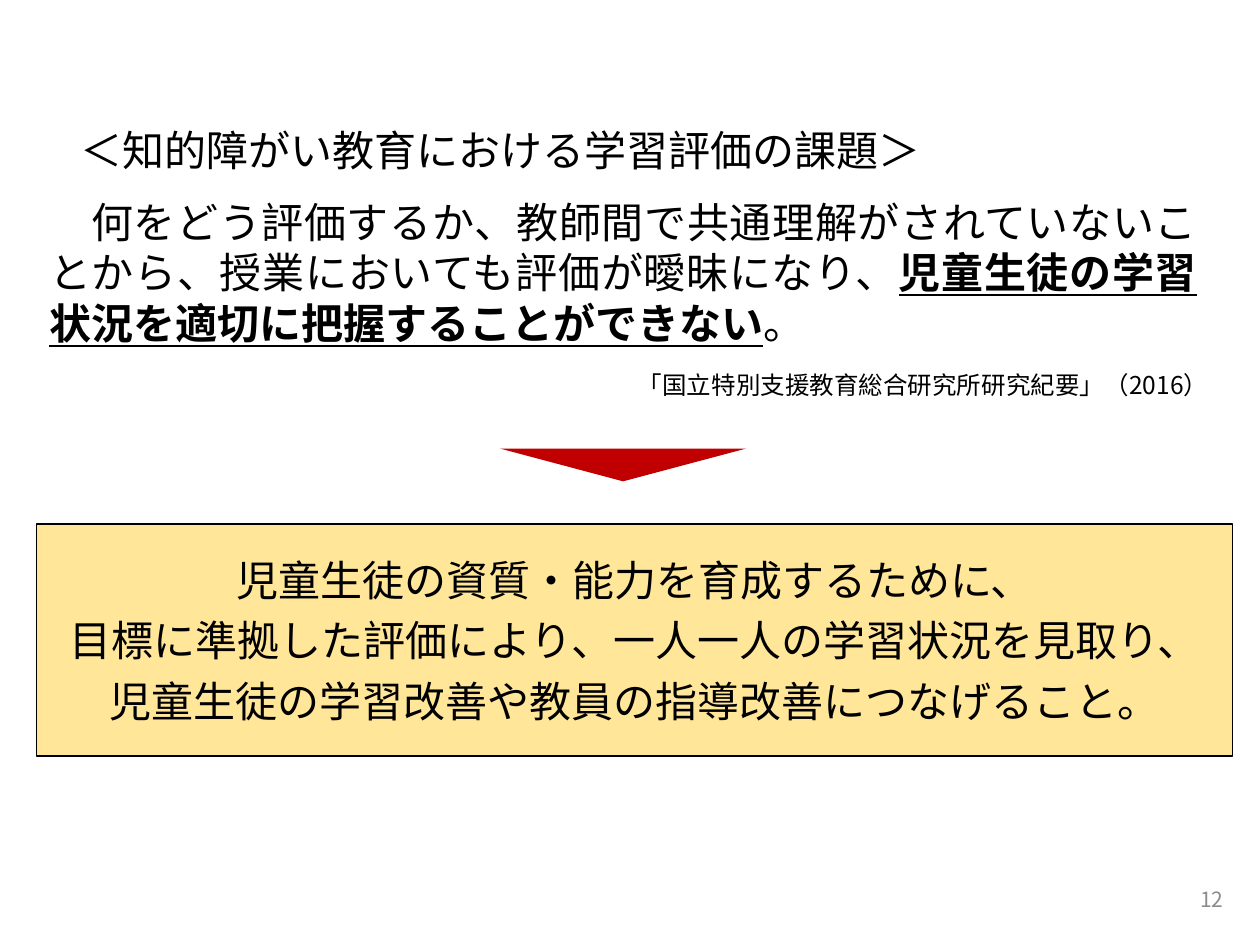
from dataclasses import dataclass

from lxml.etree import SubElement
from pptx import Presentation
from pptx.dml.color import RGBColor
from pptx.enum.shapes import MSO_SHAPE
from pptx.enum.text import MSO_ANCHOR, MSO_AUTO_SIZE, PP_ALIGN
from pptx.oxml.ns import qn
from pptx.util import Inches, Pt


@dataclass(frozen=True)
class Theme:
    font: str = "Noto Sans CJK JP"
    ink: str = "000000"
    muted: str = "8C8C8C"
    panel: str = "FFE699"
    accent: str = "C00000"
    main: int = 24
    source: int = 14
    number: int = 12


theme = Theme()


def place(box, left, top, width, height):
    """Set the position and size of a box in inches."""
    box.left, box.top = Inches(left), Inches(top)
    box.width, box.height = Inches(width), Inches(height)
    return box


def write(box, paragraphs, size=theme.main, color=theme.ink, align=PP_ALIGN.LEFT,
          anchor=MSO_ANCHOR.MIDDLE, before=0):
    """Fill a box; each paragraph is a list of (text, emphasised) spans."""
    frame = box.text_frame
    frame.word_wrap = True
    frame.auto_size = MSO_AUTO_SIZE.NONE
    frame.vertical_anchor = anchor
    for index, spans in enumerate(paragraphs):
        para = frame.add_paragraph() if index else frame.paragraphs[0]
        para.alignment = align
        para.line_spacing = 1.0
        para.space_before = Pt(before)
        for text, emphasised in spans:
            span = para.add_run()
            span.text = text
            span.font.size = Pt(size)
            span.font.bold = span.font.underline = emphasised
            span.font.color.rgb = RGBColor.from_string(color)
            span.font.name = theme.font
            SubElement(span.font._element, qn("a:ea"), typeface=theme.font)


deck = Presentation()
deck.slide_width, deck.slide_height = Inches(10), Inches(7.5)
page = deck.slides.add_slide(deck.slide_layouts[1])
shapes = page.shapes
left_edge, text_width = 0.29, 9.31

# Heading and statement of the problem
heading = place(shapes.title, left_edge, 0.94, text_width, 0.5)
write(heading, [[("＜知的障がい教育における学習評価の課題＞", False)]])
heading.text_frame.margin_left = Inches(0.35)

problem = place(page.placeholders[1], left_edge, 1.5, text_width, 1.32)
write(problem, [[
    ("何をどう評価するか、教師間で共通理解がされていないことから、"
     "授業においても評価が曖昧になり、", False),
    ("児童生徒の学習状況を適切に把握することができない", True),
    ("。", False),
]], align=PP_ALIGN.JUSTIFY)
layout = problem.text_frame.paragraphs[0]._p.get_or_add_pPr()
layout.set("marL", "0")
layout.set("indent", str(Pt(theme.main)))
SubElement(layout, qn("a:buNone"))

# Source and page number
source = place(shapes.add_textbox(0, 0, 0, 0), 4.63, 2.89, 5.06, 0.34)
write(source, [[("「国立特別支援教育総合研究所研究紀要」（2016）", False)]],
      size=theme.source, align=PP_ALIGN.RIGHT, anchor=MSO_ANCHOR.TOP)

number = place(shapes.add_textbox(0, 0, 0, 0), 7.56, 6.94, 2.25, 0.4)
write(number, [[("12", False)]], size=theme.number, color=theme.muted,
      align=PP_ALIGN.RIGHT)

# Pointer down to the conclusion
pointer = place(shapes.add_shape(MSO_SHAPE.ISOSCELES_TRIANGLE, 0, 0, 0, 0),
                3.97, 3.56, 1.95, 0.26)
pointer.rotation = 180
pointer.shadow.inherit = False
pointer.fill.solid()
pointer.fill.fore_color.rgb = RGBColor.from_string(theme.accent)
pointer.line.fill.background()

conclusion = place(shapes.add_shape(MSO_SHAPE.RECTANGLE, 0, 0, 0, 0),
                   left_edge, 4.16, 9.49, 1.84)
conclusion.shadow.inherit = False
conclusion.fill.solid()
conclusion.fill.fore_color.rgb = RGBColor.from_string(theme.panel)
conclusion.line.color.rgb = RGBColor.from_string(theme.ink)
conclusion.line.width = Pt(0.75)
conclusion_lines = [
    "児童生徒の資質・能力を育成するために、",
    "目標に準拠した評価により、一人一人の学習状況を見取り、",
    "児童生徒の学習改善や教員の指導改善につなげること。",
]
write(conclusion, [[(line, False)] for line in conclusion_lines],
      align=PP_ALIGN.CENTER, before=5.8)

deck.save("out.pptx")
